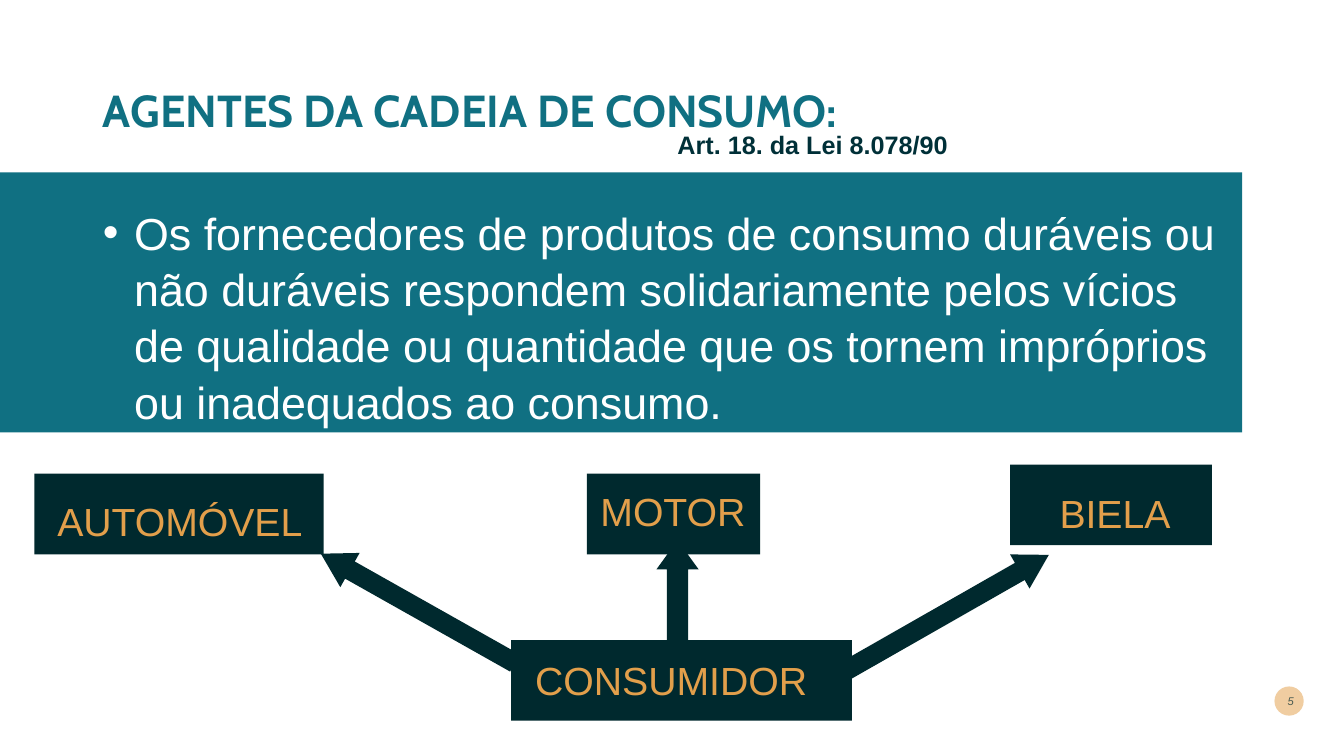
"""Build the slide on the agents of the consumer chain."""
from dataclasses import dataclass

from lxml.etree import SubElement
from pptx import Presentation
from pptx.dml.color import RGBColor
from pptx.enum.shapes import MSO_SHAPE as Kind
from pptx.enum.text import MSO_ANCHOR as Anchor, MSO_AUTO_SIZE as Fit, PP_ALIGN as Align
from pptx.oxml.ns import qn
from pptx.util import Inches, Pt

TEAL = RGBColor(0x10, 0x70, 0x82)
DARK = RGBColor(0x00, 0x29, 0x2E)
INK = RGBColor(0x00, 0x30, 0x38)
GOLD = RGBColor(0xE2, 0x9F, 0x4B)
SAND = RGBColor(0xF0, 0xCD, 0xA1)
WHITE = RGBColor(0xFF, 0xFF, 0xFF)


@dataclass
class Box:
    x: float
    y: float
    w: float
    h: float = 0.8
    fill: RGBColor = DARK
    kind: Kind = Kind.RECTANGLE
    turn: float = 0
    head: float = 0


@dataclass
class Label:
    text: str
    x: float
    y: float
    w: float
    h: float = 0.57
    size: int = 28
    color: RGBColor = GOLD
    align: Align = Align.LEFT
    anchor: Anchor = Anchor.TOP
    bold: bool = False
    slant: bool = False
    wrap: bool = True


SHAPES = [
    Box(12.64, 6.81, 0.29, 0.29, SAND, Kind.OVAL),
    Box(0, 1.71, 12.32, 2.58, TEAL),
    Box(10.02, 4.61, 2),
    Box(5.82, 4.7, 1.72),
    Box(0.34, 4.7, 2.87),
    Box(3.95, 4.93, 0.39, 2.21, kind=Kind.UP_ARROW, turn=299.4, head=0.85),
    Box(9.2, 4.92, 0.39, 2.32, kind=Kind.UP_ARROW, turn=60.3, head=0.85),
    Box(6.51, 5.36, 0.42, 0.99, kind=Kind.UP_ARROW, head=0.69),
    Box(5.07, 6.35, 3.38),
]
TITLE = Label("AGENTES DA CADEIA DE CONSUMO:", 0.92, 0.4, 11.5, 1.45, 32, TEAL,
              anchor=Anchor.MIDDLE, bold=True)
BODY = Label("Os fornecedores de produtos de consumo duráveis ou não duráveis "
             "respondem solidariamente pelos vícios de qualidade ou quantidade "
             "que os tornem impróprios ou inadequados ao consumo.",
             0.92, 1.96, 11.4, 2.09, 32, WHITE)
PAGE = Label("5", 12.54, 6.75, 0.39, 0.4, 8, DARK, Align.RIGHT, Anchor.MIDDLE, slant=True)
LABELS = [
    Label("AUTOMÓVEL", 0.47, 4.88, 2.73),
    Label("MOTOR", 5.41, 4.79, 2.53, align=Align.CENTER),
    Label("BIELA", 10.41, 4.81, 1.31, wrap=False),
    Label("CONSUMIDOR", 5.21, 6.46, 2.94),
    Label("Art. 18. da Lei 8.078/90", 6.62, 1.23, 2.98, 0.71, 18, INK, bold=True),
]


def draw(slide, box: Box) -> None:
    shape = slide.shapes.add_shape(
        box.kind, Inches(box.x), Inches(box.y), Inches(box.w), Inches(box.h))
    shape.shadow.inherit = False
    shape.fill.solid()
    shape.fill.fore_color.rgb = box.fill
    shape.line.fill.background()
    shape.rotation = box.turn
    if box.head:
        shape.adjustments[0] = 0.5
        shape.adjustments[1] = box.head


def write(shape, label: Label, font: str = "Arial"):
    shape.left, shape.top = Inches(label.x), Inches(label.y)
    shape.width, shape.height = Inches(label.w), Inches(label.h)
    frame = shape.text_frame
    frame.auto_size = Fit.NONE
    frame.word_wrap = label.wrap
    frame.vertical_anchor = label.anchor
    para = frame.paragraphs[0]
    para.alignment = label.align
    run = para.add_run()
    run.text = label.text
    run.font.name = font
    run.font.size = Pt(label.size)
    run.font.bold = label.bold
    run.font.italic = label.slant
    run.font.color.rgb = label.color
    return para


def put(slide, label: Label):
    return write(slide.shapes.add_textbox(0, 0, 0, 0), label)


def main() -> None:
    deck = Presentation()
    deck.slide_width, deck.slide_height = Inches(13.33), Inches(7.5)
    slide = deck.slides.add_slide(deck.slide_layouts[1])
    title, body = slide.placeholders
    for box in SHAPES:
        draw(slide, box)
    for holder in (title, body):
        holder.element.getparent().append(holder.element)

    write(title, TITLE, "Cabin").line_spacing = 0.9
    para = write(body, BODY)
    para.space_before = Pt(10)
    para.line_spacing = 1.05
    props = para._p.get_or_add_pPr()
    props.set("marL", str(Inches(0.31)))
    props.set("indent", str(-Inches(0.31)))
    SubElement(props, qn("a:buChar")).set("char", "•")

    for label in LABELS:
        put(slide, label)
    page = put(slide, PAGE)
    tint = next(page._p.iter(qn("a:srgbClr")))
    SubElement(tint, qn("a:alpha")).set("val", "70000")
    deck.save("out.pptx")


if __name__ == "__main__":
    main()
